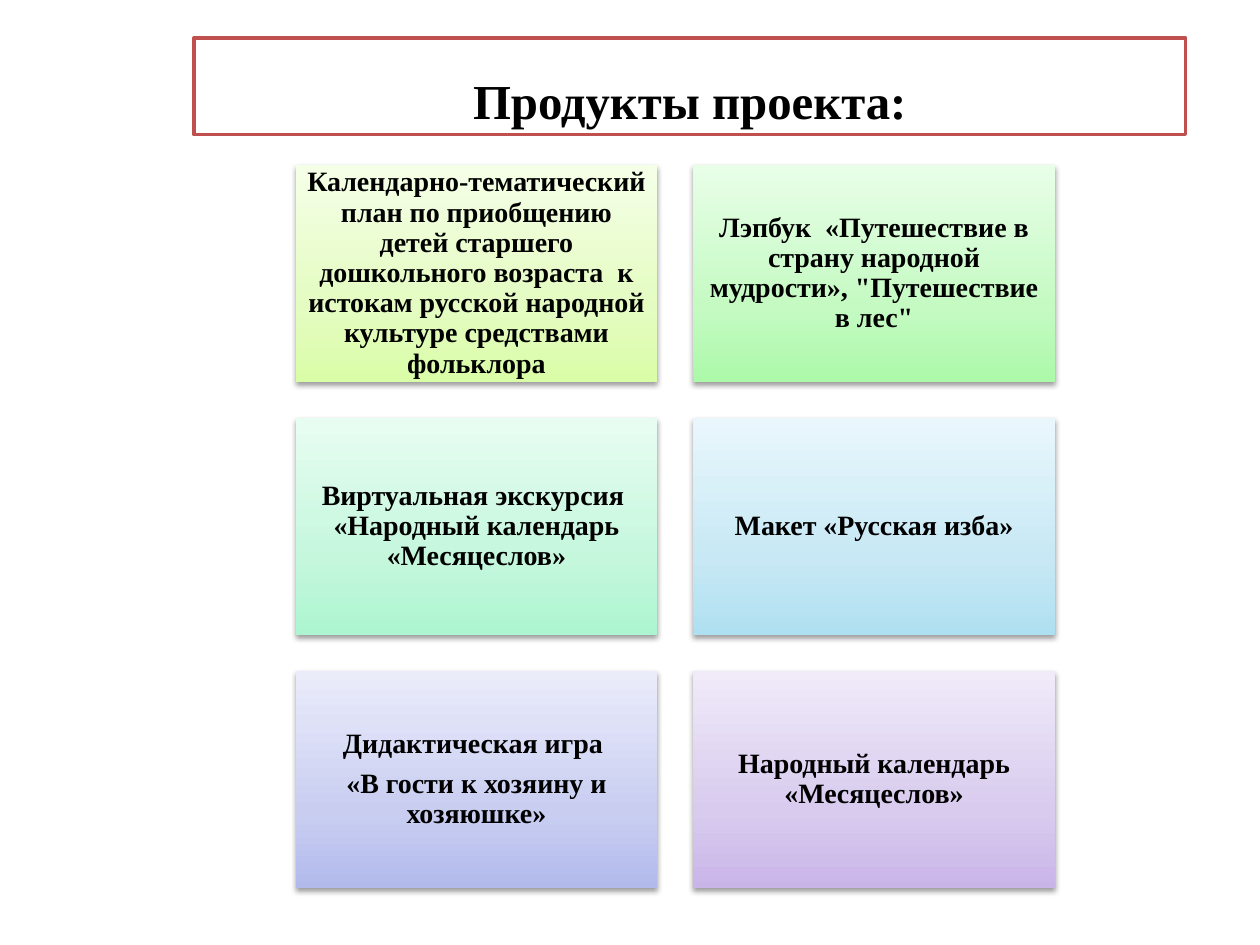
from copy import deepcopy

from pptx import Presentation
from pptx.dml.color import RGBColor
from pptx.enum.shapes import MSO_SHAPE
from pptx.enum.text import MSO_ANCHOR, PP_ALIGN
from pptx.oxml import parse_xml
from pptx.oxml.ns import nsdecls, qn
from pptx.util import Pt

COLORS = {"text": "000000", "background": "FFFFFF", "border": "C0504D", "shadow": "000000"}

CARDS = [
    (["Календарно-тематический план по приобщению детей старшего дошкольного возраста  к истокам "
      "русской народной культуре средствами фольклора"], ("DAFDA7", "E4FCC2", "F5FFE7")),
    (["Лэпбук  «Путешествие в страну народной мудрости», \"Путешествие в лес\""],
     ("ACF9AA", "C5FAC3", "E8FEE7")),
    (["Виртуальная экскурсия  «Народный календарь «Месяцеслов»"], ("ACF5D0", "C5F7DD", "E8FDF2")),
    (["Макет «Русская изба»"], ("AFE0F1", "C7E8F4", "E9F7FC")),
    (["Дидактическая игра ", "«В гости к хозяину и хозяюшке»"], ("B2BAEC", "C9CEF1", "EAECFA")),
    (["Народный календарь «Месяцеслов»"], ("C9B5E8", "D8CBEE", "F0EAF9")),
]
STOP_POSITIONS = (0, 0.35, 1)
COLUMNS = 2
GRID_LEFT, GRID_TOP = 169, 94.3
CARD_WIDTH, CARD_HEIGHT, GAP = 206.6, 124, 20.6


class SlideBuilder:
    font_name = "Times New Roman"

    def __init__(self, slide):
        self.slide = slide

    def color(self, name):
        return RGBColor.from_string(COLORS[name])

    def apply(self, target, values):
        for name, value in values.items():
            setattr(target, name, value)

    def fill_text(self, shape, lines, size, inset, anchor, paragraph_format):
        frame = shape.text_frame
        self.apply(frame, {
            "text": "\n".join(lines), "word_wrap": True, "vertical_anchor": anchor,
            "margin_left": Pt(inset), "margin_right": Pt(inset),
            "margin_top": Pt(inset), "margin_bottom": Pt(inset),
        })
        for paragraph in frame.paragraphs:
            self.apply(paragraph, {"alignment": PP_ALIGN.CENTER, **paragraph_format})
            self.apply(paragraph.font, {"name": self.font_name, "size": Pt(size), "bold": True})
            paragraph.font.color.rgb = self.color("text")

    def title(self, text, left, top, width, height):
        shape = self.slide.shapes.title
        self.apply(shape, {"left": Pt(left), "top": Pt(top), "width": Pt(width), "height": Pt(height)})
        shape.fill.solid()
        shape.fill.fore_color.rgb = self.color("background")
        shape.line.color.rgb = self.color("border")
        shape.line.width = Pt(2)
        self.fill_text(shape, [text], 27.9, 3, MSO_ANCHOR.BOTTOM, {})

    def gradient(self, shape, colors):
        shape.fill.gradient()
        shape.fill.gradient_angle = 90
        stop_list = next(shape._element.spPr.iter(qn("a:gsLst")))
        stop_list.append(deepcopy(stop_list[-1]))
        for stop, position, color in zip(shape.fill.gradient_stops, STOP_POSITIONS, colors):
            stop.position = position
            stop.color.rgb = RGBColor.from_string(color)

    def shadow(self, shape):
        shape.shadow.inherit = False
        shape._element.spPr.find(qn("a:effectLst")).append(parse_xml(
            f'<a:outerShdw {nsdecls("a")} blurRad="{Pt(3.1)}" dist="{Pt(1.6)}" dir="5400000" '
            f'rotWithShape="0"><a:srgbClr val="{COLORS["shadow"]}"><a:alpha val="38000"/>'
            '</a:srgbClr></a:outerShdw>'))

    def card(self, lines, colors, left, top, width, height):
        shape = self.slide.shapes.add_shape(
            MSO_SHAPE.RECTANGLE, Pt(left), Pt(top), Pt(width), Pt(height))
        self.gradient(shape, colors)
        shape.line.fill.background()
        self.shadow(shape)
        self.fill_text(shape, lines, 16, 4.8, MSO_ANCHOR.MIDDLE,
                       {"line_spacing": 0.9, "space_after": Pt(5.6)})


def main():
    presentation = Presentation()
    presentation.slide_width, presentation.slide_height = Pt(720), Pt(540)
    builder = SlideBuilder(presentation.slides.add_slide(presentation.slide_layouts[5]))
    builder.title("Продукты проекта:", 110.9, 21.6, 566.6, 55.4)
    for index, (lines, colors) in enumerate(CARDS):
        row, column = divmod(index, COLUMNS)
        builder.card(lines, colors, GRID_LEFT + column * (CARD_WIDTH + GAP),
                     GRID_TOP + row * (CARD_HEIGHT + GAP), CARD_WIDTH, CARD_HEIGHT)
    presentation.save("out.pptx")


if __name__ == "__main__":
    main()
